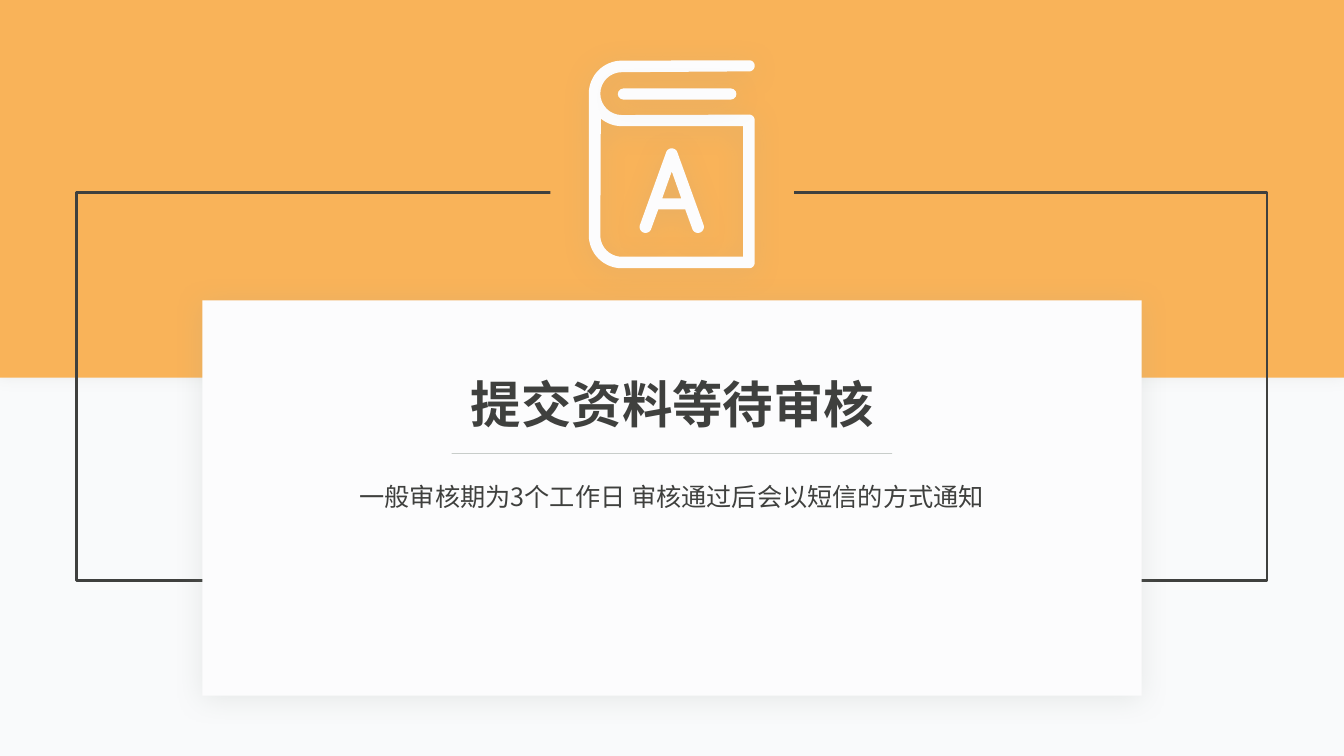
from math import cos, radians, sin

from lxml.etree import SubElement
from pptx import Presentation
from pptx.dml.color import RGBColor
from pptx.enum.shapes import MSO_CONNECTOR, MSO_SHAPE
from pptx.enum.text import MSO_ANCHOR, MSO_AUTO_SIZE, PP_ALIGN
from pptx.oxml.ns import qn
from pptx.util import Cm, Pt

FONT = "Noto Sans CJK SC"
ORANGE, PAPER, INK, GREY = "F9B359", "FCFCFD", "3F403E", "969F98"
BAND_SHADOW = ("D5D7D5", 40, 10, 0)
SOFT_SHADOW = (GREY, 20, 20, 3)


def paint(color_format, color):
    color_format.rgb = RGBColor.from_string(color)


def arc(x, y, radius, start, end, steps=16):
    """Points on a circle, with angles in degrees clockwise from the right."""
    angles = [radians(start + (end - start) * i / steps) for i in range(steps + 1)]
    return [(x + radius * cos(a), y + radius * sin(a)) for a in angles]


class SlideStyle:
    def __init__(self, slide):
        self.slide = slide
        self.shapes = slide.shapes

    def background(self, color):
        fill = self.slide.background.fill
        fill.solid()
        paint(fill.fore_color, color)

    def shadow(self, shape, color, alpha, blur, distance):
        effects = shape._element.spPr.find(qn("a:effectLst"))
        outer = SubElement(effects, qn("a:outerShdw"), blurRad=str(Pt(blur)),
                           dist=str(Pt(distance)), dir="5400000",
                           algn="ctr", rotWithShape="0")
        tint = SubElement(outer, qn("a:srgbClr"), val=color)
        SubElement(tint, qn("a:alpha"), val=str(alpha * 1000))

    def finish(self, shape, fill=None, shadow=None):
        shape.shadow.inherit = False
        if fill:
            shape.fill.solid()
            paint(shape.fill.fore_color, fill)
        else:
            shape.fill.background()
        shape.line.fill.background()
        if shadow:
            self.shadow(shape, *shadow)
        return shape

    def box(self, x, y, width, height, fill=None, shadow=None,
            kind=MSO_SHAPE.RECTANGLE):
        shape = self.shapes.add_shape(kind, Cm(x), Cm(y), Cm(width), Cm(height))
        return self.finish(shape, fill, shadow)

    def outline(self, *contours, fill, shadow):
        """One freeform; contours after the first cut holes into it."""
        first, *holes = [[(Cm(x), Cm(y)) for x, y in c] for c in contours]
        builder = self.shapes.build_freeform(*first[0])
        builder.add_line_segments(first[1:], close=True)
        for hole in holes:
            builder.move_to(*hole[0])
            builder.add_line_segments(hole[1:], close=True)
        return self.finish(builder.convert_to_shape(), fill, shadow)

    def border(self, shape, color, width):
        paint(shape.line.color, color)
        shape.line.width = Pt(width)

    def rule(self, x1, x2, y, color, width, alpha):
        line = self.shapes.add_connector(MSO_CONNECTOR.STRAIGHT,
                                         Cm(x1), Cm(y), Cm(x2), Cm(y))
        self.border(line, color, width)
        tint = line._element.spPr.find(".//" + qn("a:srgbClr"))
        SubElement(tint, qn("a:alpha"), val=str(alpha * 1000))
        SubElement(line._element.spPr, qn("a:effectLst"))

    def set_text(self, shape, text, size, bold=False, wrap=True, spacing=1.0):
        frame = shape.text_frame
        frame.text = text
        frame.word_wrap = wrap
        frame.auto_size = MSO_AUTO_SIZE.SHAPE_TO_FIT_TEXT
        frame.vertical_anchor = MSO_ANCHOR.TOP
        paragraph = frame.paragraphs[0]
        paragraph.alignment = PP_ALIGN.CENTER
        paragraph.line_spacing = spacing
        font = paragraph.runs[0].font
        font.name, font.size, font.bold = FONT, Pt(size), bold
        paint(font.color, INK)
        SubElement(font._element, qn("a:ea"), typeface=FONT)

    def text(self, x, y, width, height, text, size, **look):
        box = self.shapes.add_textbox(Cm(x), Cm(y), Cm(width), Cm(height))
        self.set_text(box, text, size, **look)

    def title(self, x, y, width, height, text, size, **look):
        title = self.shapes.title
        title.left, title.top = Cm(x), Cm(y)
        title.width, title.height = Cm(width), Cm(height)
        self.set_text(title, text, size, **look)
        # The title stands in front of the card
        self.shapes._spTree.append(title._element)


def draw_book(style):
    spine, right = 15.67, 18.88
    curl, foot = 2.36, 5.93
    # Cover with curled spine, and the hole of its front
    cover = [*arc(spine, curl, 0.54, 90, 270), *arc(right, 1.66, 0.14, 90, -90),
             *arc(spine, curl, 0.83, 270, 180), *arc(spine, foot, 0.83, 180, 90),
             *arc(right, 6.62, 0.14, 90, 0), *arc(right, 3.03, 0.14, 0, -90)]
    front = [(18.73, 6.47), *arc(spine, foot, 0.54, 90, 180),
             *arc(spine, curl, 0.82, 130, 90), (18.73, 3.18)]
    # Letter with round ends, and the hole above its crossbar
    letter = [*arc(16.27, 5.72, 0.15, 20, 200), *arc(16.93, 3.89, 0.15, 200, 340),
              *arc(17.59, 5.72, 0.15, -20, 160), (17.27, 5.28), (16.59, 5.28)]
    counter = [(16.93, 4.32), (17.17, 5), (16.69, 5)]

    look = {"fill": PAPER, "shadow": SOFT_SHADOW}
    notch = style.box(13.87, 0, 6.14, 7.57, ORANGE)
    book = style.outline(cover, front, **look)
    pages = style.box(15.57, 2.23, 2.99, 0.28, **look,
                      kind=MSO_SHAPE.ROUNDED_RECTANGLE)
    pages.adjustments[0] = 0.5
    initial = style.outline(letter, counter, **look)
    style.shapes.add_group_shape([notch, book, pages, initial])


def main():
    deck = Presentation()
    deck.slide_width, deck.slide_height = Cm(33.87), Cm(19.05)
    style = SlideStyle(deck.slides.add_slide(deck.slide_layouts[5]))

    # Backdrop and frame
    style.background("F9FAFB")
    style.box(0, 0, 33.87, 9.52, ORANGE, BAND_SHADOW)
    style.border(style.box(1.93, 4.85, 30, 9.78), INK, 2)

    # Book icon in the gap of the frame
    draw_book(style)

    # Card with the message
    style.box(5.1, 7.57, 23.67, 9.96, PAPER, SOFT_SHADOW)
    style.text(6.96, 11.86, 19.94, 1.17,
               "一般审核期为3个工作日 审核通过后会以短信的方式通知", 18, spacing=1.2)
    style.title(11.61, 9.27, 10.67, 1.8, "提交资料等待审核", 36, bold=True, wrap=False)
    style.rule(22.48, 11.38, 11.43, GREY, 0.5, 50)

    deck.save("out.pptx")


if __name__ == "__main__":
    main()
